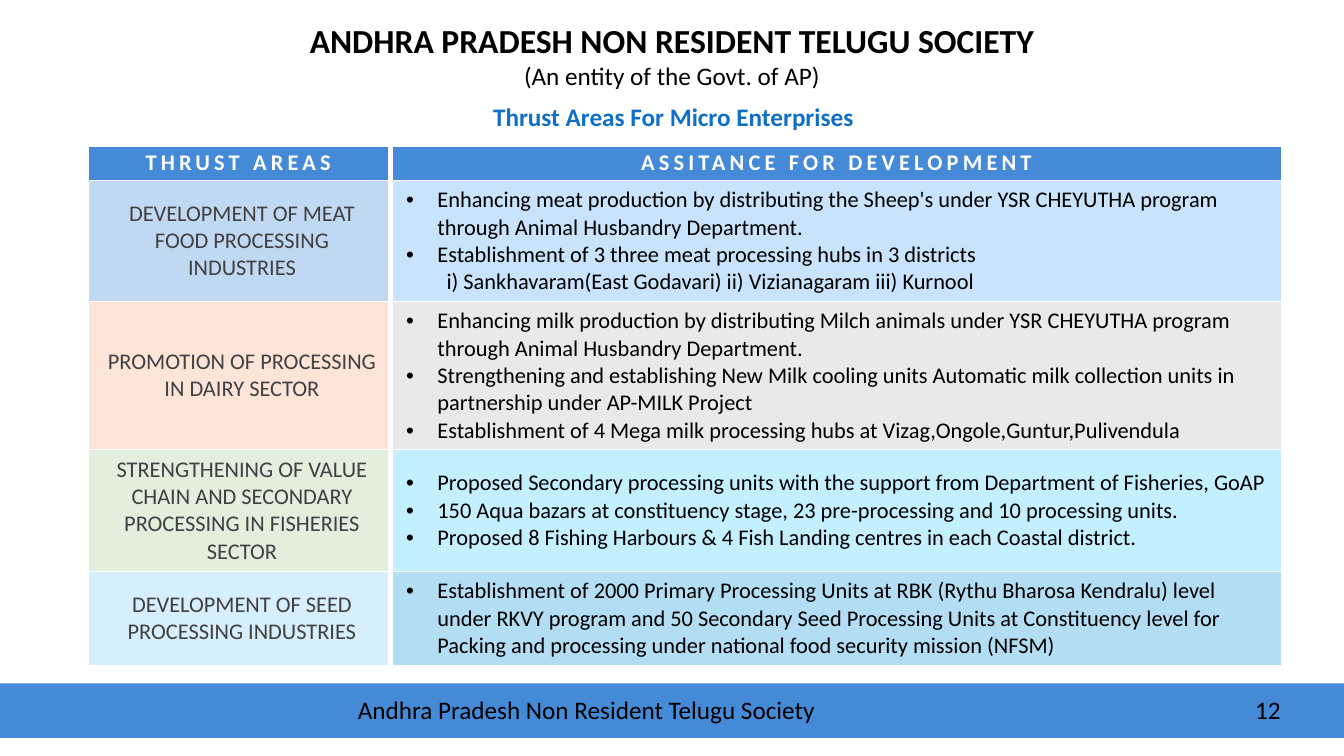
"""Build the slide on thrust areas for micro enterprises."""
from lxml.etree import SubElement
from pptx import Presentation
from pptx.dml.color import RGBColor
from pptx.enum.shapes import MSO_SHAPE
from pptx.enum.text import MSO_ANCHOR, MSO_AUTO_SIZE, PP_ALIGN
from pptx.oxml.ns import qn
from pptx.util import Inches, Pt


def tint(hue):
    return RGBColor.from_string(hue)


def write(para, text, size, hue, bold=False, align=PP_ALIGN.LEFT):
    para.alignment = align
    run = para.add_run()
    run.text = text
    run.font.name = "Calibri"
    run.font.size = Pt(size)
    run.font.bold = bold
    run.font.color.rgb = tint(hue)
    return run


BLUE, BLACK, WHITE = "448AD7", "000000", "FFFFFF"
MID = PP_ALIGN.CENTER

deck = Presentation()
deck.slide_width = Inches(13.33)
deck.slide_height = Inches(7.5)
slide = deck.slides.add_slide(deck.slide_layouts[5])

title = slide.shapes.title
title.left, title.top = Inches(0), Inches(0.15)
title.width, title.height = Inches(13.33), Inches(0.81)
frame = title.text_frame
frame.auto_size = MSO_AUTO_SIZE.NONE
frame.vertical_anchor = MSO_ANCHOR.TOP
write(frame.paragraphs[0], "ANDHRA PRADESH NON RESIDENT TELUGU SOCIETY", 24, BLACK, True, MID)
write(frame.add_paragraph(), "(An entity of the Govt. of AP)", 18, BLACK, False, MID)

band = slide.shapes.add_shape(
    MSO_SHAPE.RECTANGLE, Inches(0), Inches(6.78), Inches(13.33), Inches(0.54))
band.shadow.inherit = False
band.fill.solid()
band.fill.fore_color.rgb = tint(BLUE)
band.line.fill.background()

labels = [
    (3.45, 6.84, 4.79, "Andhra Pradesh Non Resident Telugu Society", BLACK, False, PP_ALIGN.LEFT),
    (12.35, 6.84, 0.5, "12", BLACK, False, PP_ALIGN.LEFT),
    (2.8, 0.96, 7.76, "Thrust Areas For Micro Enterprises", "0F6FC6", True, MID),
]
for left, top, width, text, hue, bold, align in labels:
    box = slide.shapes.add_textbox(Inches(left), Inches(top), Inches(width), Inches(0.4))
    box.text_frame.word_wrap = bold
    write(box.text_frame.paragraphs[0], text, 18, hue, bold, align)

areas = [
    ("DEVELOPMENT OF MEAT FOOD PROCESSING INDUSTRIES", "C1D8F2", "C8E3FB", 1.2, [
        "Enhancing meat production by distributing the Sheep's under YSR CHEYUTHA program "
        "through Animal Husbandry Department.",
        "Establishment of 3 three meat processing hubs in 3 districts",
        "i) Sankhavaram(East Godavari) ii) Vizianagaram iii) Kurnool"]),
    ("PROMOTION OF PROCESSING IN DAIRY SECTOR", "FCE5D8", "E9E9EA", 1.47, [
        "Enhancing milk production by distributing Milch animals under YSR CHEYUTHA program "
        "through Animal Husbandry Department.",
        "Strengthening and establishing New Milk cooling units Automatic milk collection units "
        "in partnership under AP-MILK Project",
        "Establishment of 4 Mega milk processing hubs at Vizag,Ongole,Guntur,Pulivendula"]),
    ("STRENGTHENING OF VALUE CHAIN AND SECONDARY PROCESSING IN FISHERIES SECTOR",
     "E4EEDC", "C4EFFF", 1.21, [
         "Proposed Secondary processing units with the support from Department of Fisheries, GoAP",
         "150 Aqua bazars at constituency stage, 23 pre-processing and 10 processing units.",
         "Proposed 8 Fishing Harbours & 4 Fish Landing centres in each Coastal district."]),
    ("DEVELOPMENT OF SEED PROCESSING INDUSTRIES", "D7EEFC", "B3DDF2", 0.93, [
        "Establishment of 2000 Primary Processing Units at RBK (Rythu Bharosa Kendralu) level "
        "under RKVY program and 50 Secondary Seed Processing Units at Constituency level for "
        "Packing and processing under national food security mission (NFSM)"]),
]
grid = slide.shapes.add_table(
    len(areas) + 1, 3, Inches(0.88), Inches(1.45), Inches(11.82), Inches(5.15)).table
for col, width in zip(grid.columns, (2.97, 0.03, 8.82)):
    col.width = Inches(width)
for row, high in zip(grid.rows, [0.34] + [area[3] for area in areas]):
    row.height = Inches(high)

fills = [(BLUE, WHITE, BLUE)] + [(area[1], WHITE, area[2]) for area in areas]
for r, hues in enumerate(fills):
    for c, hue in enumerate(hues):
        cell = grid.cell(r, c)
        cell.fill.solid()
        cell.fill.fore_color.rgb = tint(hue)
        cell.vertical_anchor = MSO_ANCHOR.MIDDLE
        pad = r > 0 and c != 1
        cell.margin_left = Inches(0.14 if pad else 0)
        cell.margin_right = Inches(0.07 if pad else 0)
        cell.margin_top = cell.margin_bottom = Inches(0.06 if pad else 0)

for c, head in ((0, "THRUST AREAS"), (2, "ASSITANCE FOR DEVELOPMENT")):
    run = write(grid.cell(0, c).text_frame.paragraphs[0], head, 16, WHITE, True, MID)
    run.font._element.set("spc", "300")

for r, (name, _, _, _, points) in enumerate(areas, 1):
    write(grid.cell(r, 0).text_frame.paragraphs[0], name, 16, "404041", False, MID)
    frame = grid.cell(r, 2).text_frame
    for n, point in enumerate(points):
        para = frame.add_paragraph() if n else frame.paragraphs[0]
        props = para._p.get_or_add_pPr()
        if point.startswith("i)"):
            props.set("marL", str(Inches(0.4)))
        else:
            props.set("marL", str(Inches(0.31)))
            props.set("indent", str(-Inches(0.31)))
            SubElement(props, qn("a:buFont")).set("typeface", "Arial")
            SubElement(props, qn("a:buChar")).set("char", "•")
        write(para, point, 16, BLACK)

deck.save("out.pptx")
